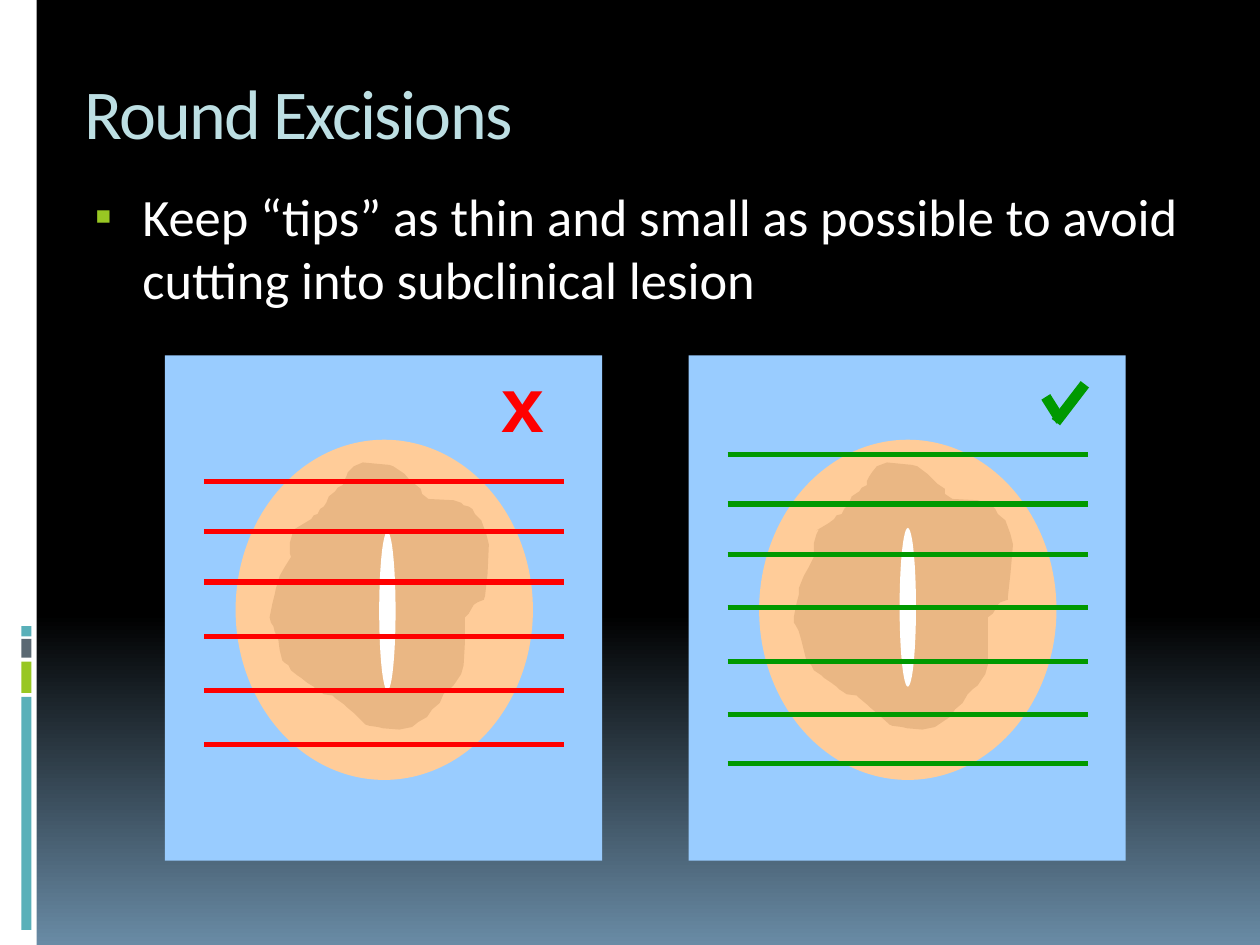
import pptx
import pptx.dml.color
import pptx.enum.shapes
import pptx.enum.text
import pptx.oxml
import pptx.oxml.ns
import pptx.util
from dataclasses import dataclass
from lxml import etree
from pptx.util import Inches

COLORS = {
    "white": "FFFFFF", "black": "000000", "horizon": "698BA5",
    "teal": "59B0B9", "lime": "98C723", "slate": "5B6973",
    "title": "BDDFE3", "panel": "99CCFF", "skin": "FFCC99",
    "lesion": "996633", "wrong": "FF0000", "right": "009900",
}
KINDS = pptx.enum.shapes.MSO_SHAPE
UNITS_PER_INCH = 100
LESION_OUTLINE = [
    (232, 421), (242, 415), (247, 412), (249, 409), (252, 408), (254, 404),
    (257, 402), (259, 399), (261, 394), (266, 390), (268, 387), (272, 385),
    (273, 382), (275, 378), (276, 375), (281, 370), (288, 367), (309, 369),
    (312, 370), (321, 376), (326, 382), (329, 384), (334, 388), (335, 392),
    (340, 396), (360, 397), (366, 399), (368, 401), (372, 402), (375, 404),
    (377, 408), (382, 413), (386, 424), (388, 432), (387, 455), (385, 473),
    (384, 476), (379, 478), (376, 480), (372, 487), (369, 490), (369, 510),
    (368, 528), (366, 535), (360, 544), (357, 547), (354, 549), (352, 551),
    (349, 558), (343, 563), (339, 569), (332, 573), (327, 577), (317, 579),
    (304, 578), (300, 577), (293, 576), (290, 575), (281, 566), (275, 561),
    (273, 559), (266, 554), (264, 552), (257, 551), (251, 547), (249, 545),
    (244, 542), (239, 538), (236, 536), (231, 532), (229, 528), (226, 526),
    (224, 524), (222, 516), (221, 508), (218, 501), (217, 497), (215, 494),
    (214, 490), (216, 480), (218, 472), (219, 467), (222, 457), (226, 450),
    (231, 442), (230, 439), (230, 431), (232, 424), (234, 420),
]


@dataclass
class Area:
    left: float
    top: float
    width: float
    height: float
    color: str
    kind: int = KINDS.RECTANGLE


@dataclass
class Stroke:
    start: tuple[float, float]
    end: tuple[float, float]
    color: str
    weight: float


@dataclass
class Panel:
    offset: float
    slit: Area
    cut_color: str
    cut_tops: tuple[float, ...]


SIDEBAR = [
    Area(0, 0, 0.29, 7.5, "white"),
    Area(0.17, 5.53, 0.08, 1.85, "teal"),
    Area(0.17, 5.25, 0.08, 0.25, "lime"),
    Area(0.17, 5.07, 0.08, 0.15, "slate"),
    Area(0.17, 4.97, 0.08, 0.08, "teal"),
]
PANELS = [
    Panel(0, Area(3.01, 4.22, 0.13, 1.26, "white", KINDS.OVAL), "wrong",
          (3.82, 4.22, 4.62, 5.05, 5.48, 5.91)),
    Panel(4.155, Area(7.14, 4.19, 0.13, 1.26, "white", KINDS.OVAL), "right",
          (3.61, 4, 4.4, 4.82, 5.25, 5.67, 6.06)),
]
CHECK_MARK = [
    Stroke((8.3, 3.15), (8.42, 3.34), "right", 6),
    Stroke((8.38, 3.35), (8.61, 3.05), "right", 6),
]


def rgb(name: str) -> pptx.dml.color.RGBColor:
    return pptx.dml.color.RGBColor.from_string(COLORS[name])


def paint(shape, color: str) -> None:
    shape.shadow.inherit = False
    shape.fill.solid()
    shape.fill.fore_color.rgb = rgb(color)
    shape.line.fill.background()


def draw_area(page, area: Area) -> None:
    shape = page.shapes.add_shape(
        area.kind, Inches(area.left), Inches(area.top),
        Inches(area.width), Inches(area.height))
    paint(shape, area.color)


def draw_stroke(page, stroke: Stroke) -> None:
    line = page.shapes.add_connector(
        pptx.enum.shapes.MSO_CONNECTOR.STRAIGHT,
        *map(Inches, stroke.start), *map(Inches, stroke.end))
    line.line.color.rgb = rgb(stroke.color)
    line.line.width = pptx.util.Pt(stroke.weight)
    etree.SubElement(line._element.spPr, pptx.oxml.ns.qn("a:effectLst"))


def draw_lesion(page, offset: float) -> None:
    shift = offset * UNITS_PER_INCH
    points = [(x + shift, y) for x, y in LESION_OUTLINE]
    builder = page.shapes.build_freeform(
        *points[0], scale=Inches(1) / UNITS_PER_INCH)
    builder.add_line_segments(points[1:], close=True)
    lesion = builder.convert_to_shape()
    paint(lesion, "lesion")
    tint = lesion._element.spPr.find(".//" + pptx.oxml.ns.qn("a:srgbClr"))
    etree.SubElement(tint, pptx.oxml.ns.qn("a:alpha"), val="20000")


def draw_panel(page, panel: Panel) -> None:
    draw_area(page, Area(1.31 + panel.offset, 2.82, 3.47, 4.01, "panel"))
    draw_area(page, Area(1.87 + panel.offset, 3.49, 2.36, 2.7, "skin", KINDS.OVAL))
    draw_lesion(page, panel.offset)
    draw_area(page, panel.slit)
    left = 1.62 + panel.offset
    for top in panel.cut_tops:
        draw_stroke(page, Stroke((left, top), (left + 2.86, top), panel.cut_color, 3))


def add_text(page, text: str, area: Area, size: float, font: str = "Calibri",
             inset: tuple[float, float] = (0.06, 0.07), wrap: bool = True):
    box = page.shapes.add_textbox(
        Inches(area.left), Inches(area.top), Inches(area.width), Inches(area.height))
    frame = box.text_frame
    frame.word_wrap = wrap
    frame.margin_left, frame.margin_top = map(Inches, inset)
    para = frame.paragraphs[0]
    para.text = text
    para.font.name = font
    para.font.size = pptx.util.Pt(size)
    para.font.color.rgb = rgb(area.color)
    return para


def add_bullet(para) -> None:
    properties = para._p.get_or_add_pPr()
    properties.set("marL", str(Inches(0.45)))
    properties.set("indent", str(Inches(-0.38)))
    namespace = pptx.oxml.ns.nsdecls("a")
    bullet = [
        f'<a:buClr {namespace}><a:srgbClr val="{COLORS["lime"]}"/></a:buClr>',
        f'<a:buSzPct {namespace} val="95000"/>',
        f'<a:buFont {namespace} typeface="Arial"/>',
        f'<a:buChar {namespace} char="▪"/>',
    ]
    for position, markup in enumerate(bullet):
        properties.insert(position, pptx.oxml.parse_xml(markup))


def paint_background(page) -> None:
    fill = page.background.fill
    fill.gradient()
    fill.gradient_angle = 270
    for stop, position, color in zip(
            fill.gradient_stops, (0.65, 1), ("black", "horizon")):
        stop.position = position
        stop.color.rgb = rgb(color)


def main() -> None:
    deck = pptx.Presentation()
    deck.slide_width, deck.slide_height = Inches(10), Inches(7.5)
    page = deck.slides.add_slide(deck.slide_layouts[6])
    paint_background(page)
    for area in SIDEBAR:
        draw_area(page, area)

    title = add_text(page, "Round Excisions", Area(0.61, 0.48, 8.89, 1, "title"), 40)
    title.runs[0].font._element.set("spc", "-100")
    body = add_text(
        page,
        "Keep “tips” as thin and small as possible to avoid cutting into subclinical lesion",
        Area(0.62, 1.39, 8.88, 1.25, "white"), 30)
    add_bullet(body)

    for panel in PANELS:
        draw_panel(page, panel)
    cross = add_text(page, "x", Area(3.88, 2.77, 0.55, 0.84, "wrong"), 44, "Arial",
                     inset=(0.1, 0.05), wrap=False)
    cross.font.bold = True
    for stroke in CHECK_MARK:
        draw_stroke(page, stroke)
    deck.save("out.pptx")


if __name__ == "__main__":
    main()
